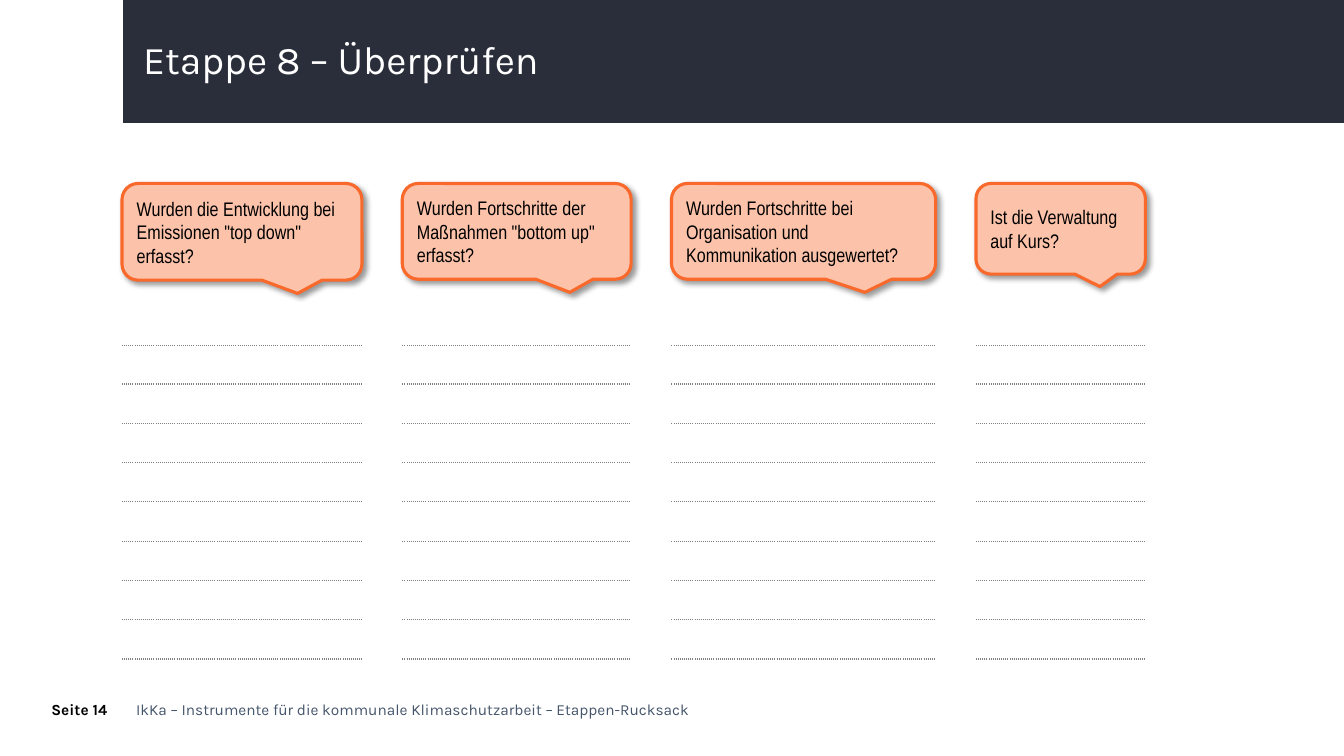
from dataclasses import dataclass

from lxml.etree import SubElement
from pptx import Presentation
from pptx.dml.color import RGBColor
from pptx.enum.shapes import MSO_SHAPE
from pptx.enum.text import MSO_ANCHOR, PP_ALIGN
from pptx.oxml.ns import qn
from pptx.util import Inches, Pt


@dataclass(frozen=True)
class Theme:
    """Colours, fonts and type sizes of the deck."""
    navy: str = "2A2E3B"
    white: str = "FFFFFF"
    black: str = "000000"
    slate: str = "44546A"
    peach: str = "FCC3AA"
    orange: str = "F8692B"
    grey: str = "808080"
    head: str = "Karla"
    body: str = "Arial Narrow"
    large: int = 28
    mid: int = 14
    small: int = 11


THEME = Theme()
GAP = 0.4
ROWS = [0.37, 0.38] + [0.39] * 7
ITEMS = [
    ('Wurden die Entwicklung bei Emissionen "top down" erfasst?', 2.38, 0.96),
    ('Wurden Fortschritte der Maßnahmen "bottom up" erfasst?', 2.27, 0.95),
    ("Wurden Fortschritte bei Organisation und Kommunikation ausgewertet?", 2.62, 0.95),
    ("Ist die Verwaltung auf Kurs?", 1.68, 0.9),
]


def write(frame, text, color, **form):
    """Put one formatted, left-aligned paragraph into a text frame."""
    para = frame.paragraphs[0]
    para.alignment = PP_ALIGN.LEFT
    run = para.add_run()
    run.text = text
    for key, value in form.items():
        setattr(run.font, key, value)
    run.font.color.rgb = RGBColor.from_string(color)
    return para


def label(slide, box, text, color, size, bold=False, inset=0.0, wrap=True):
    """Add a text box in the heading font."""
    frame = slide.shapes.add_textbox(*map(Inches, box)).text_frame
    form = {"word_wrap": wrap, "margin_left": Inches(inset), "margin_right": Inches(inset),
            "margin_top": Inches(inset / 2), "margin_bottom": Inches(inset / 2)}
    for key, value in form.items():
        setattr(frame, key, value)
    return write(frame, text, color, name=THEME.head, size=Pt(size), bold=bold)


def header(slide, box, text):
    """Draw the dark band with the slide title."""
    left, top, width, height = box
    band = slide.shapes.add_shape(MSO_SHAPE.RECTANGLE, *map(Inches, box))
    band.shadow.inherit = False
    band.fill.solid()
    band.fill.fore_color.rgb = RGBColor.from_string(THEME.navy)
    band.line.fill.background()
    area = (left + 0.1, top + 0.35, width - 0.62, height / 2)
    para = label(slide, area, text, THEME.white, THEME.large, inset=0.1)
    para.line_spacing = 0.9


def footer(slide, box, page, text):
    """Place the page number and the running text."""
    left, top, width, height = box
    label(slide, (left, top, 0.73, height), page, THEME.black, THEME.small, bold=True)
    label(slide, (left + 0.84, top, width - 0.84, height), text, THEME.slate,
          THEME.small, wrap=False)


def shade(shape):
    """Give a shape a soft shadow to the lower right."""
    shape.shadow.inherit = False
    effect = shape._element.spPr.find(qn("a:effectLst"))
    outer = SubElement(effect, qn("a:outerShdw"), blurRad=str(Pt(4)), dist=str(Pt(3)),
                       dir="2700000", algn="tl", rotWithShape="0")
    color = SubElement(outer, qn("a:srgbClr"), val=THEME.black)
    SubElement(color, qn("a:alpha"), val="40000")


def bubble(slide, box, text):
    """Draw a speech bubble holding a question."""
    shape = slide.shapes.add_shape(MSO_SHAPE.ROUNDED_RECTANGULAR_CALLOUT, *map(Inches, box))
    for index, value in enumerate((0.232, 0.637, 0.167)):
        shape.adjustments[index] = value
    shape.fill.solid()
    shape.fill.fore_color.rgb = RGBColor.from_string(THEME.peach)
    shape.line.color.rgb = RGBColor.from_string(THEME.orange)
    shape.line.width = Pt(2.25)
    shade(shape)
    frame = shape.text_frame
    frame.word_wrap = True
    frame.vertical_anchor = MSO_ANCHOR.MIDDLE
    write(frame, text, THEME.black, name=THEME.body, size=Pt(THEME.mid))


def border(cell, side, drawn):
    """Set one cell edge to a dotted line or to none."""
    line = SubElement(cell._tc.get_or_add_tcPr(), qn("a:ln" + side), w=str(Pt(1)))
    if drawn:
        fill = SubElement(line, qn("a:solidFill"))
        SubElement(fill, qn("a:srgbClr"), val=THEME.grey)
        SubElement(line, qn("a:prstDash"), val="sysDot")
    else:
        SubElement(line, qn("a:noFill"))


def notes(slide, left, top, width):
    """Add a one-column table of dotted writing lines."""
    box = (left, top, width, sum(ROWS))
    table = slide.shapes.add_table(len(ROWS), 1, *map(Inches, box)).table
    table.first_row = table.horz_banding = False
    for index, height in enumerate(ROWS):
        table.rows[index].height = Inches(height)
        cell = table.cell(index, 0)
        cell.margin_top = cell.margin_bottom = 0
        for side, drawn in (("L", False), ("R", False), ("T", index > 0), ("B", True)):
            border(cell, side, drawn)
        cell.fill.background()


def board(slide, left, top):
    """Lay out the questions with their writing lines, side by side."""
    for text, width, height in ITEMS:
        bubble(slide, (left, top, width, height), text)
        notes(slide, left, top + 1.24, width)
        left += width + GAP


def main():
    """Build and save the slide."""
    deck = Presentation()
    deck.slide_width, deck.slide_height = Inches(13.33), Inches(7.5)
    slide = deck.slides.add_slide(deck.slide_layouts[6])
    header(slide, (1.22, 0, 12.11, 1.22), "Etappe 8 – Überprüfen")
    footer(slide, (0.51, 6.95, 6.41, 0.19), "Seite 14",
           "IkKa – Instrumente für die kommunale Klimaschutzarbeit – Etappen-Rucksack")
    board(slide, 1.21, 1.82)
    deck.save("out.pptx")


if __name__ == "__main__":
    main()
